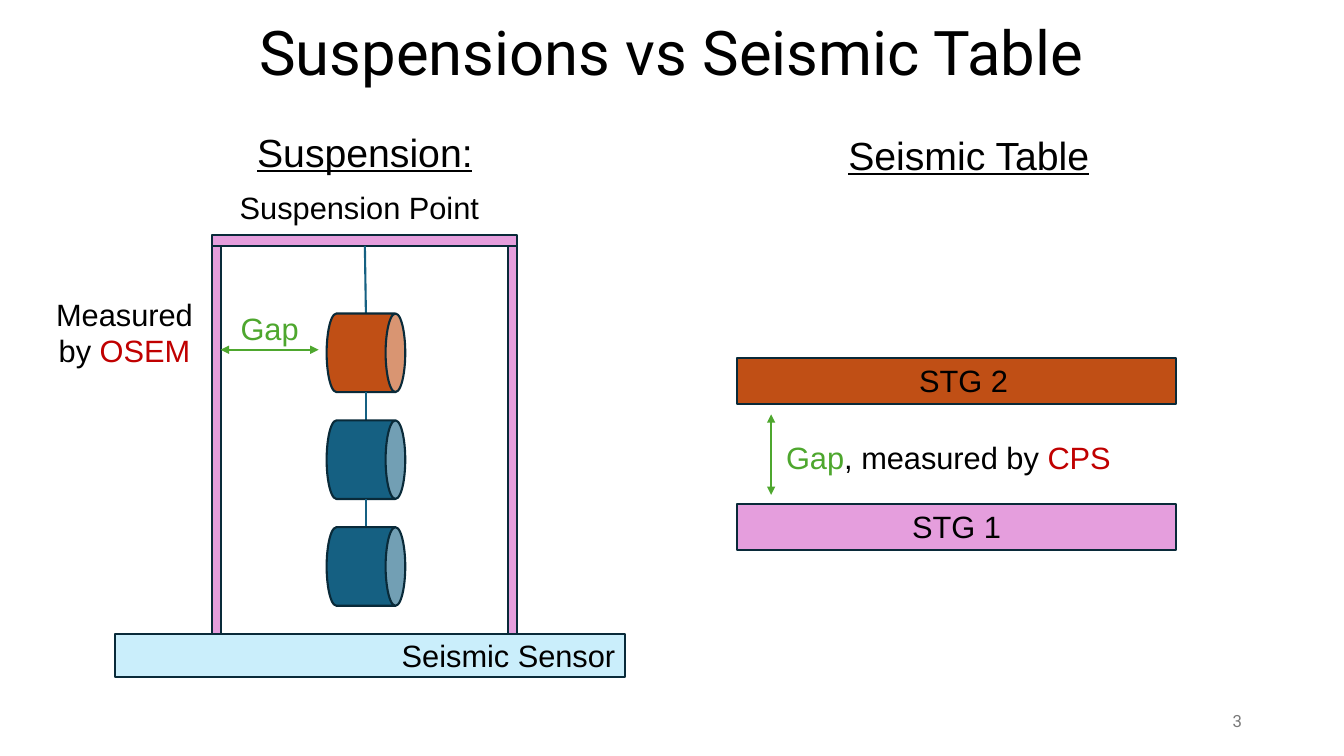
from lxml.etree import SubElement
from pptx import Presentation
from pptx.dml.color import RGBColor
from pptx.enum.shapes import MSO_CONNECTOR, MSO_SHAPE
from pptx.enum.text import MSO_ANCHOR, MSO_AUTO_SIZE, PP_ALIGN
from pptx.oxml.ns import qn
from pptx.util import Inches, Pt

# Grid: ten columns and ten rows to the inch
CELL = Inches(0.1)
COLS, ROWS = 133.33, 75

BLACK = RGBColor(0x00, 0x00, 0x00)
GREY = RGBColor(0x79, 0x79, 0x79)
NAVY = RGBColor(0x09, 0x2A, 0x39)
BLUE = RGBColor(0x15, 0x60, 0x82)
SKY = RGBColor(0xCA, 0xEE, 0xFB)
RUST = RGBColor(0xC0, 0x4F, 0x15)
PINK = RGBColor(0xE5, 0x9E, 0xDD)
GREEN = RGBColor(0x4E, 0xA7, 0x2E)
RED = RGBColor(0xC0, 0x00, 0x00)

LEFT, MID, RIGHT = PP_ALIGN.LEFT, PP_ALIGN.CENTER, PP_ALIGN.RIGHT


def grid(*cells):
    return [round(cell * CELL) for cell in cells]


def add_text(slide, area, runs, size=22, align=MID, face="Arial", line=False):
    box = slide.shapes.add_textbox(*grid(*area))
    frame = box.text_frame
    frame.word_wrap = True
    frame.auto_size = MSO_AUTO_SIZE.SHAPE_TO_FIT_TEXT
    para = frame.paragraphs[0]
    para.alignment = align
    for words, color in runs:
        run = para.add_run()
        run.text = words
        font = run.font
        font.name, font.size = face, Pt(size)
        font.color.rgb = color
        if line:
            font.underline = True
    return frame


def center(frame):
    frame.auto_size = MSO_AUTO_SIZE.NONE
    frame.vertical_anchor = MSO_ANCHOR.MIDDLE


def add_solid(slide, area, fill, kind=MSO_SHAPE.RECTANGLE, turn=0):
    solid = slide.shapes.add_shape(kind, *grid(*area))
    solid.shadow.inherit = False
    solid.rotation = turn
    solid.fill.solid()
    solid.fill.fore_color.rgb = fill
    solid.line.color.rgb = NAVY
    solid.line.width = Pt(1.5)


def add_line(slide, ends, color, arrow=False):
    link = slide.shapes.add_connector(MSO_CONNECTOR.STRAIGHT, *grid(*ends))
    link.line.color.rgb = color
    link.line.width = Pt(1.5)
    if arrow:
        stroke = link.line._get_or_add_ln()
        for end in ("a:headEnd", "a:tailEnd"):
            SubElement(stroke, qn(end)).set("type", "triangle")
    SubElement(link._element.spPr, qn("a:effectLst"))


def draw_tower(slide):
    # Base and frame
    add_solid(slide, (11.4, 62.9, 50.6, 4.3), SKY)
    for left in (21, 50.4):
        add_solid(slide, (left, 24.4, 0.9, 38.5), PINK)
    add_solid(slide, (21, 23.3, 30.3, 1.1), PINK)

    # Hanging masses, each on its wire
    side, step, first = 7.8, 10.6, 31.1
    wire = 24.4
    for place, fill in enumerate((RUST, BLUE, BLUE)):
        top = first + place * step
        add_line(slide, (36.3 if place else 36.2, wire, 36.3, top), BLUE)
        add_solid(slide, (32.4, top, side, side), fill, MSO_SHAPE.CAN, 90)
        wire = top + side

    # Gap and labels
    add_line(slide, (31.6, 34.7, 21.9, 34.7), GREEN, arrow=True)
    add_text(slide, (22.4, 30.2, 8.7, 4.7), [("Gap", GREEN)])
    add_text(slide, (4.5, 28.8, 15.7, 8.4),
             [("Measured by ", BLACK), ("OSEM", RED)])
    add_text(slide, (33.1, 62.7, 34.7, 4.7), [("Seismic Sensor", BLACK)])
    add_text(slide, (22.8, 18.2, 31.8, 4.7), [("Suspension Point", BLACK)],
             align=LEFT)


def draw_table(slide):
    # Two stages
    stages = (("STG 2", 35.5, RUST, 88.5), ("STG 1", 50, PINK, 87.8))
    for name, top, fill, left in stages:
        add_solid(slide, (73.1, top, 43.6, 4.6), fill)
        add_text(slide, (left, top - 0.1, 14.2, 4.7), [(name, BLACK)])

    # Gap between them
    add_line(slide, (76.5, 41.1, 76.5, 49.1), GREEN, arrow=True)
    add_text(slide, (77, 43, 37.2, 4.7),
             [("Gap", GREEN), (", measured by ", BLACK), ("CPS", RED)],
             align=LEFT)


def main():
    deck = Presentation()
    deck.slide_width, deck.slide_height = grid(COLS, ROWS)
    slide = deck.slides.add_slide(deck.slide_layouts[6])

    # Title and page number
    title = add_text(slide, (13.5, 1, 106.3, 9),
                     [("Suspensions vs Seismic Table", BLACK)],
                     size=44, face="Roboto")
    title.paragraphs[0].line_spacing = 0.9
    center(title)
    page = add_text(slide, (94.2, 69.5, 30, 4), [("3", GREY)],
                    size=12, align=RIGHT, face="Roboto")
    center(page)

    # Headings
    heads = (("Suspension:", 15, 12.2), ("Seismic Table", 74.9, 12.5))
    for words, left, top in heads:
        add_text(slide, (left, top, 42.4, 5.7), [(words, BLACK)],
                 size=28, line=True)

    draw_tower(slide)
    draw_table(slide)
    deck.save("out.pptx")


if __name__ == "__main__":
    main()
